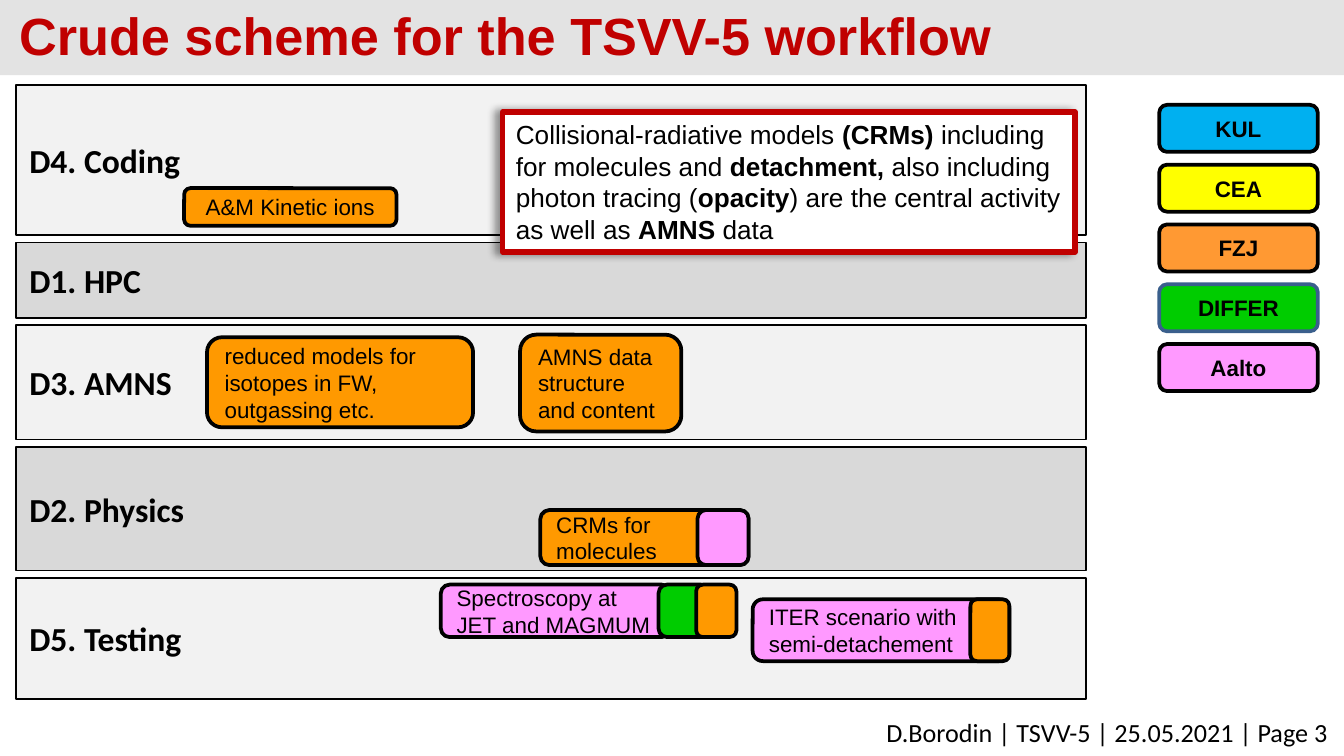
from dataclasses import dataclass

from lxml import etree
from pptx import Presentation
from pptx.dml.color import RGBColor
from pptx.enum.shapes import MSO_SHAPE as Preset
from pptx.enum.text import MSO_ANCHOR as Anchor, MSO_AUTO_SIZE as AutoSize, PP_ALIGN as Align
from pptx.oxml.ns import qn
from pptx.util import Inches, Pt

COLUMNS = 1000
ROWS = COLUMNS * 9 / 16
CELL = Inches(10) // COLUMNS

COLORS = {
    "ink": "000000", "title": "C00000", "header": "E3E3E3", "white": "FFFFFF",
    "light": "F2F2F2", "dark": "D9D9D9", "blue": "00B0F0", "yellow": "FFFF00",
    "apricot": "FF9933", "green": "00CC00", "pink": "FF99FF", "orange": "FF9900",
    "slate": "3A5F8C",
}

PARTNERS = [
    ("KUL", "blue", "ink"), ("CEA", "yellow", "ink"), ("FZJ", "apricot", "ink"),
    ("DIFFER", "green", "slate"), ("Aalto", "pink", "ink"),
]

DELIVERABLES = [
    ("D4. Coding", 112, "light", [
        ("A&M Kinetic ions", (125, 77, 158, 28), "orange", Align.CENTER, []),
    ]),
    ("D1. HPC", 56, "dark", []),
    ("D3. AMNS", 85, "light", [
        ("reduced models for isotopes in FW, outgassing etc.",
         (142, 9, 198, 67), "orange", Align.LEFT, []),
        ("AMNS data structure and content", (375, 7, 120, 72), "orange", Align.LEFT, []),
    ]),
    ("D2. Physics", 92, "dark", [
        ("CRMs for molecules", (390, 47, 155, 41), "orange", Align.LEFT, [("pink", 117, 38)]),
    ]),
    ("D5. Testing", 90, "light", [
        ("Spectroscopy at JET and MAGMUM", (316, 5, 171, 39), "pink", Align.LEFT,
         [("green", 162, 38), ("orange", 190, 30)]),
        ("ITER scenario with semi-detachement", (548, 16, 191, 46), "pink", Align.LEFT,
         [("orange", 162, 29)]),
    ]),
]

CENTRAL_ACTIVITY = [
    ("Collisional-radiative models", False), (" (CRMs)", True),
    (" including for molecules and ", False), ("detachment, ", True),
    ("also including photon tracing (", False), ("opacity", True),
    (") are the central activity as well as ", False), ("AMNS", True), (" data", False),
]


@dataclass
class Box:
    left: float
    top: float
    width: float
    height: float

    def inner(self, left, top, width, height):
        return Box(self.left + left, self.top + top, width, height)

    def emu(self):
        return [round(n * CELL) for n in (self.left, self.top, self.width, self.height)]


def rgb(name):
    return RGBColor.from_string(COLORS[name])


def write(shape, text, size=12, font="Arial", color="ink", bold=False,
          align=Align.LEFT, anchor=Anchor.MIDDLE, spacing=None, grow=False):
    frame = shape.text_frame
    frame.word_wrap = True
    frame.auto_size = AutoSize.SHAPE_TO_FIT_TEXT if grow else AutoSize.NONE
    frame.vertical_anchor = anchor
    paragraph = frame.paragraphs[0]
    paragraph.alignment = align
    if spacing:
        paragraph.line_spacing = Pt(spacing)
    for words, strong in [(text, bold)] if isinstance(text, str) else text:
        run = paragraph.add_run()
        run.text = words
        run.font.name, run.font.size, run.font.bold = font, Pt(size), strong
        run.font.color.rgb = rgb(color)


def panel(slide, box, fill, line="ink", weight=2, preset=Preset.ROUNDED_RECTANGLE):
    shape = slide.shapes.add_shape(preset, *box.emu())
    shape.shadow.inherit = False
    shape.fill.solid()
    shape.fill.fore_color.rgb = rgb(fill)
    if line:
        shape.line.color.rgb = rgb(line)
        shape.line.width = Pt(weight)
    else:
        shape.line.fill.background()
    return shape


def header(slide, box):
    panel(slide, box, "header", line=None, preset=Preset.RECTANGLE)
    title = slide.shapes.add_textbox(*box.inner(4.5, 8, 917, 38).emu())
    write(title, "Crude scheme for the TSVV-5 workflow", size=28, color="title",
          bold=True, spacing=32)


def footer(slide, box):
    credit = slide.shapes.add_textbox(*box.emu())
    write(credit, "D.Borodin | TSVV-5 | 25.05.2021 | Page 3", size=14, font="Calibri",
          align=Align.RIGHT, anchor=Anchor.TOP, grow=True)


def task(slide, box, label, fill, align, partner_tabs):
    write(panel(slide, box, fill), label, align=align)
    for color, left, width in partner_tabs:
        panel(slide, box.inner(left, 0, width, box.height), color)


def deliverables(slide, box):
    gap = (box.height - sum(height for _, height, _, _ in DELIVERABLES)) / (len(DELIVERABLES) - 1)
    top = 0
    for label, height, fill, tasks in DELIVERABLES:
        band = box.inner(0, top, box.width, height)
        write(panel(slide, band, fill, weight=1, preset=Preset.RECTANGLE), label,
              size=18, font="Calibri", bold=True)
        for name, place, color, align, partner_tabs in tasks:
            task(slide, band.inner(*place), name, color, align, partner_tabs)
        top += height + gap


def legend(slide, box, chip_height=35):
    pitch = (box.height - chip_height) / (len(PARTNERS) - 1)
    for row, (partner, fill, line) in enumerate(PARTNERS):
        chip = panel(slide, box.inner(0, row * pitch, box.width, chip_height), fill, line)
        write(chip, partner, bold=True, align=Align.CENTER)


def callout(slide, box):
    note = panel(slide, box, "white", line="title", weight=3, preset=Preset.RECTANGLE)
    write(note, CENTRAL_ACTIVITY, size=14, anchor=Anchor.TOP, grow=True)
    effects = note._element.spPr.find(qn("a:effectLst"))
    shadow = etree.SubElement(effects, qn("a:outerShdw"), blurRad=str(Pt(4)),
                              dist=str(Pt(3)), dir="10800000", rotWithShape="0")
    tint = etree.SubElement(shadow, qn("a:srgbClr"), val=COLORS["ink"])
    etree.SubElement(tint, qn("a:alpha"), val="40000")


def main():
    deck = Presentation()
    deck.slide_width, deck.slide_height = COLUMNS * CELL, round(ROWS * CELL)
    slide = deck.slides.add_slide(deck.slide_layouts[6])
    page = Box(0, 0, COLUMNS, ROWS)
    header(slide, page.inner(0, 0, COLUMNS, 56))
    footer(slide, page.inner(199, 528, 799, 34))
    deliverables(slide, page.inner(12, 63, 796, 457))
    legend(slide, page.inner(862.5, 78, 118, 213))
    callout(slide, page.inner(374, 83.5, 426, 104))
    deck.save("out.pptx")


if __name__ == "__main__":
    main()
